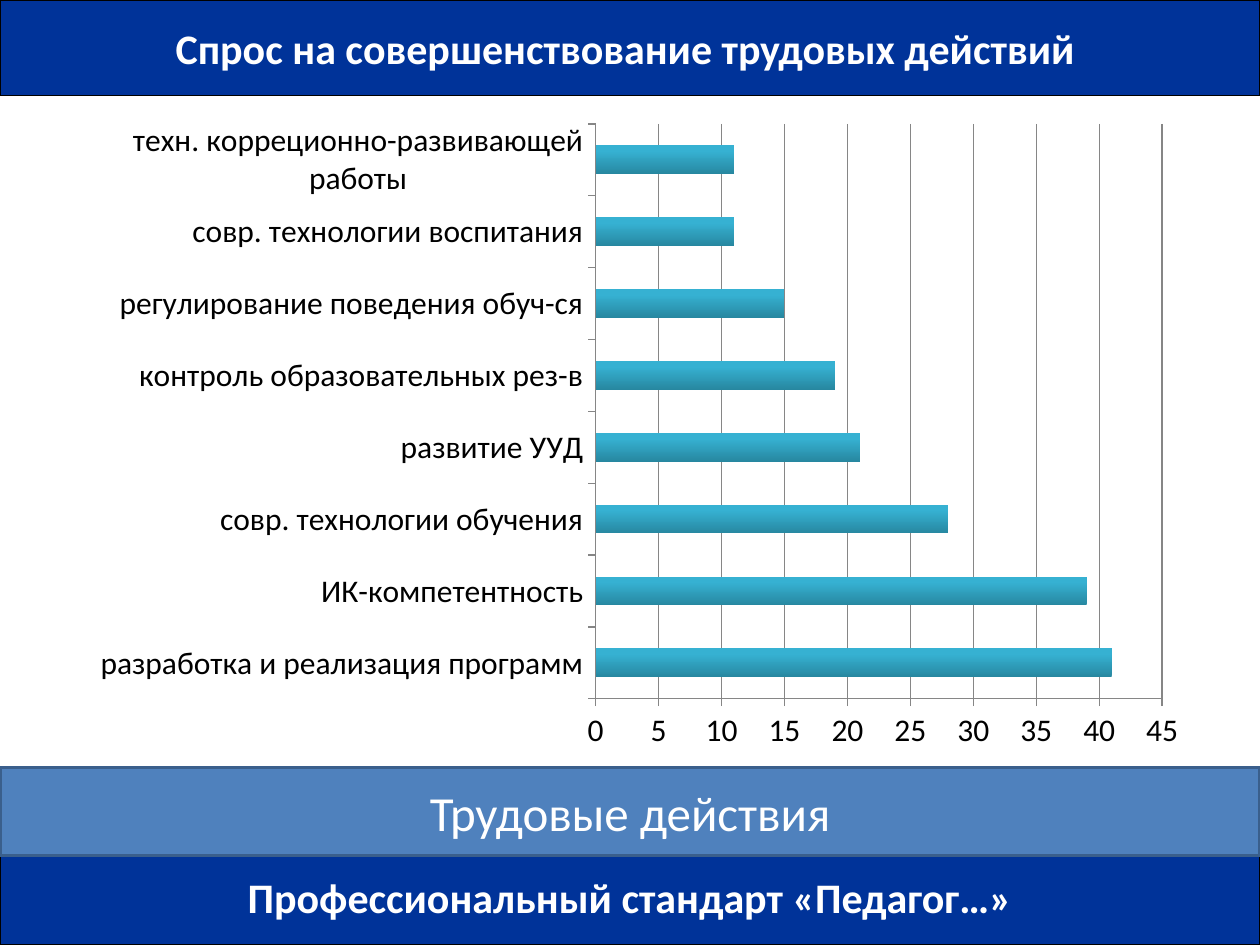
from pptx import Presentation
from pptx.chart.data import CategoryChartData
from pptx.dml.color import RGBColor
from pptx.enum.chart import XL_CHART_TYPE as ChartType, XL_TICK_MARK as Tick
from pptx.enum.shapes import MSO_SHAPE as Shape
from pptx.enum.text import MSO_ANCHOR as Anchor, MSO_AUTO_SIZE as AutoSize, PP_ALIGN as Align
from pptx.util import Pt

WIDTH, HEIGHT = 720, 540
BAND_HEIGHT = 54.7
NAVY_BAND = {"fill": "003399", "line": "000000", "weight": 0.75,
             "size": 24, "bold": True, "wrap": False}
BLUE_BAND = {"fill": "4F81BD", "line": "3A5F8C", "weight": 2,
             "size": 28, "bold": False, "wrap": True}
DEMAND = {
    "разработка и реализация программ": 41,
    "ИК-компетентность": 39,
    "совр. технологии обучения": 28,
    "развитие УУД": 21,
    "контроль образовательных рез-в": 19,
    "регулирование поведения обуч-ся": 15,
    "совр. технологии воспитания": 11,
    "техн. корреционно-развивающей работы": 11,
}


def color(value):
    return RGBColor.from_string(value)


def apply(target, values):
    for name, value in values.items():
        setattr(target, name, value)


class SlideBuilder:
    font = "Calibri"
    axis_color = "868686"

    def __init__(self, slide):
        self.slide = slide

    def style_line(self, line, line_color, weight):
        line.color.rgb = color(line_color)
        line.width = Pt(weight)

    def format_band(self, band, text, style):
        band.fill.solid()
        band.fill.fore_color.rgb = color(style["fill"])
        self.style_line(band.line, style["line"], style["weight"])
        frame = band.text_frame
        frame.text = text
        apply(frame, {"word_wrap": style["wrap"], "auto_size": AutoSize.NONE,
                      "vertical_anchor": Anchor.MIDDLE})
        paragraph = frame.paragraphs[0]
        paragraph.alignment = Align.CENTER
        font = paragraph.runs[0].font
        apply(font, {"name": self.font, "size": Pt(style["size"]), "bold": style["bold"]})
        font.color.rgb = color("FFFFFF")

    def title(self, text, height, style):
        heading = self.slide.shapes.title
        apply(heading, {"left": Pt(0), "top": Pt(0), "width": Pt(WIDTH), "height": Pt(height)})
        self.format_band(heading, text, style)

    def band(self, text, top, height, style):
        band = self.slide.shapes.add_shape(Shape.RECTANGLE, Pt(0), Pt(top), Pt(WIDTH), Pt(height))
        band.shadow.inherit = False
        self.format_band(band, text, style)

    def bar_chart(self, values, left, top, width, height):
        data = CategoryChartData()
        data.categories = list(values)
        data.add_series("Series 1", list(values.values()))
        chart = self.slide.shapes.add_chart(
            ChartType.BAR_CLUSTERED, Pt(left), Pt(top), Pt(width), Pt(height), data).chart
        apply(chart, {"has_legend": False, "has_title": False})
        apply(chart.font, {"name": self.font, "size": Pt(18)})
        chart.font.color.rgb = color("000000")

        # Bars shaded from dark at the bottom to light at the top
        plot = chart.plots[0]
        apply(plot, {"gap_width": 150, "vary_by_categories": False})
        fill = plot.series[0].format.fill
        fill.gradient()
        fill.gradient_angle = 90
        for stop, shade, position in zip(fill.gradient_stops, ("2787A0", "36B1D2"), (0, 0.8)):
            stop.color.rgb = color(shade)
            stop.position = position

        # Axes and grid
        for axis in (chart.category_axis, chart.value_axis):
            apply(axis, {"major_tick_mark": Tick.OUTSIDE, "minor_tick_mark": Tick.NONE})
            self.style_line(axis.format.line, self.axis_color, 0.75)
        apply(chart.value_axis, {"minimum_scale": 0, "maximum_scale": 45, "major_unit": 5,
                                 "has_major_gridlines": True})
        self.style_line(chart.value_axis.major_gridlines.format.line, self.axis_color, 0.75)


def main():
    deck = Presentation()
    apply(deck, {"slide_width": Pt(WIDTH), "slide_height": Pt(HEIGHT)})
    title_only = deck.slide_layouts[5]
    builder = SlideBuilder(deck.slides.add_slide(title_only))

    # Heading, footer, chart and its caption, from back to front
    builder.title("Спрос на совершенствование трудовых действий ", BAND_HEIGHT, NAVY_BAND)
    builder.band("Профессиональный стандарт «Педагог…»", HEIGHT - BAND_HEIGHT,
                 BAND_HEIGHT, NAVY_BAND)
    builder.bar_chart(DEMAND, 44.6, 62, 641.5, 373.7)
    builder.band("Трудовые действия", 438.5, 50.4, BLUE_BAND)

    deck.save("out.pptx")


if __name__ == "__main__":
    main()
